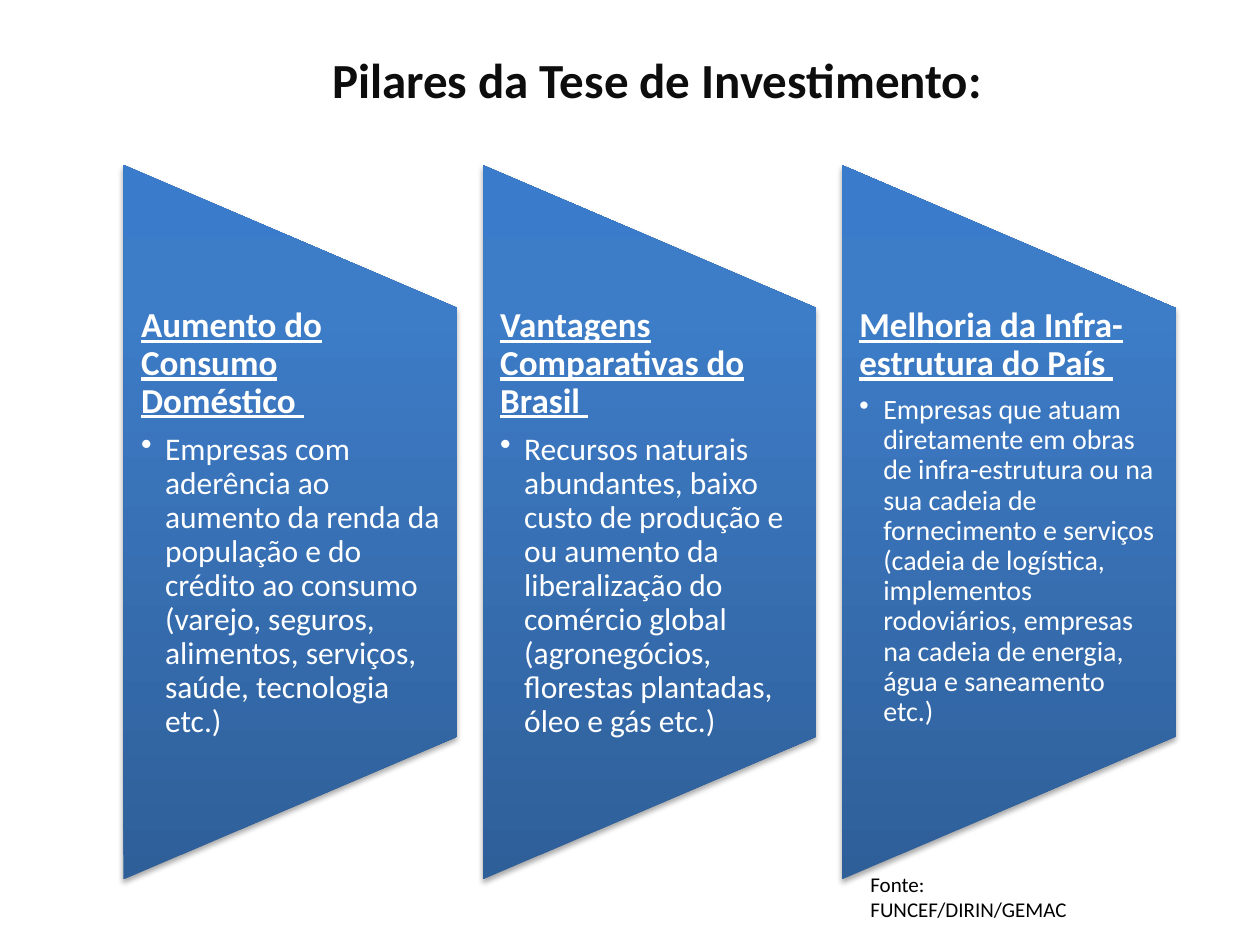
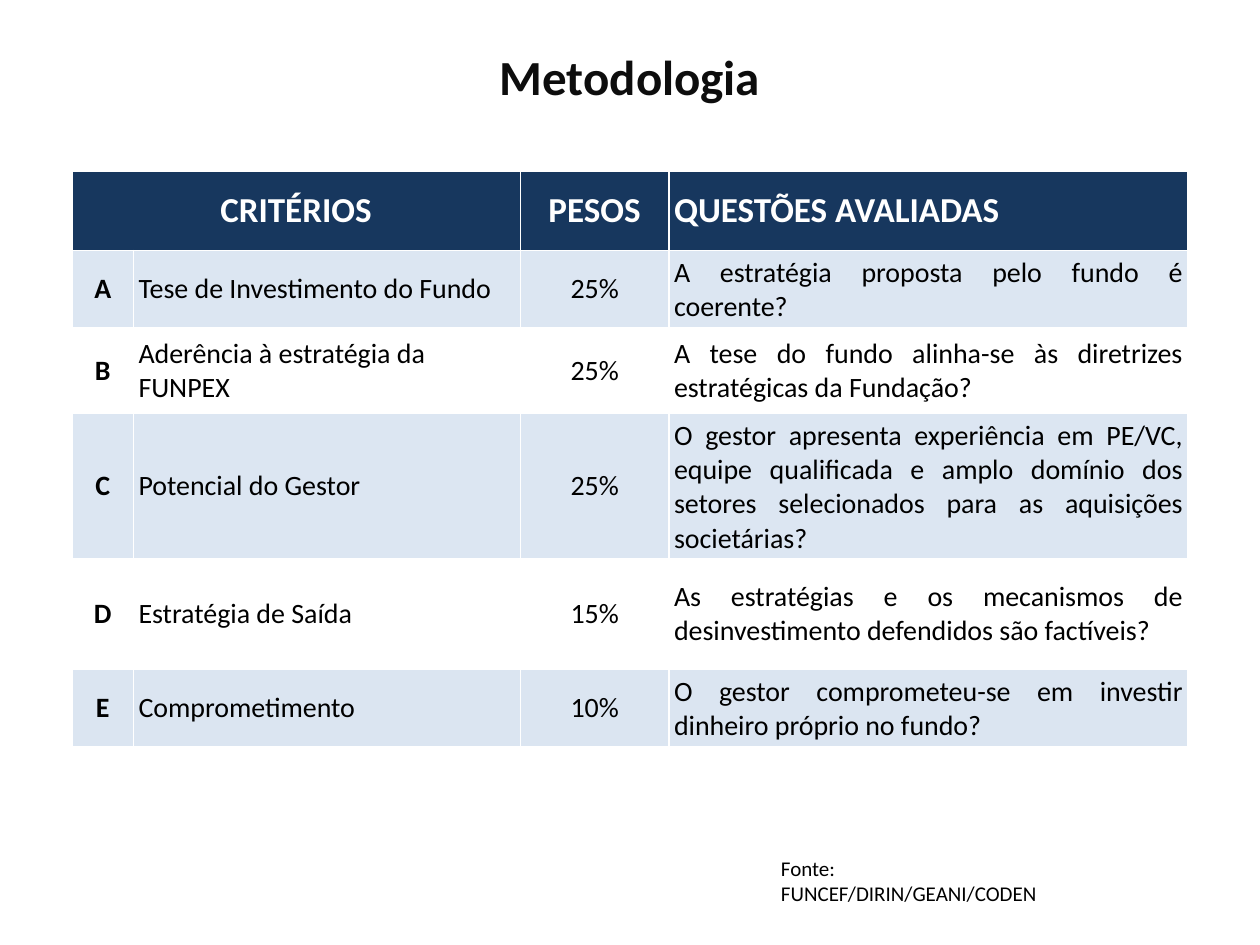
import lxml.etree
import pptx
import pptx.dml.color
import pptx.enum.shapes
import pptx.enum.text
import pptx.oxml
import pptx.oxml.ns
import pptx.util

HUES = {
    "ink": "0D0D0D", "black": "000000", "white": "FFFFFF",
    "navy": "17375E", "pale": "DCE6F2", "mist": "DBE5F1",
    "deep": "2F5F99", "blue": "3D7CC7", "top": "3A7CCB",
}
FONT = "Calibri"
UNIT = pptx.util.Inches(0.1)
LEFT = pptx.enum.text.PP_ALIGN.LEFT
MID = pptx.enum.text.PP_ALIGN.CENTER
EVEN = pptx.enum.text.PP_ALIGN.JUSTIFY
CORE = pptx.enum.text.MSO_ANCHOR.MIDDLE
TOP = pptx.enum.text.MSO_ANCHOR.TOP
SPACE = 'xmlns:a="http://schemas.openxmlformats.org/drawingml/2006/main"'


def write(para, text, size=16, hue="black", bold=False, line=False,
          align=LEFT, lead=None, after=None, dot=False):
    if dot:
        props = para._p.get_or_add_pPr()
        props.set("marL", str(pptx.util.Inches(0.19)))
        props.set("indent", str(-pptx.util.Inches(0.19)))
        mark = lxml.etree.SubElement(props, pptx.oxml.ns.qn("a:buChar"))
        mark.set("char", "•")
    para.alignment = align
    if lead:
        para.line_spacing = lead
    if after:
        para.space_after = pptx.util.Pt(after)
    run = para.add_run()
    run.text = text
    font = run.font
    font.name = FONT
    font.size = pptx.util.Pt(size)
    font.bold = bold
    font.underline = line
    font.color.rgb = pptx.dml.color.RGBColor.from_string(HUES[hue])


def frame(slide, x, y, wide, high, side=1, edge=0.5, anchor=TOP):
    area = [round(n * UNIT) for n in (x, y, wide, high)]
    body = slide.shapes.add_textbox(*area).text_frame
    body.word_wrap = True
    body.vertical_anchor = anchor
    body.margin_left = body.margin_right = round(side * UNIT)
    body.margin_top = body.margin_bottom = round(edge * UNIT)
    return body


deck = pptx.Presentation()
deck.slide_width = 100 * UNIT
deck.slide_height = 75 * UNIT

heads = [
    ("Pilares da Tese de Investimento:", (4.3, 0, 95.7, 12.5),
     "Fonte: FUNCEF/DIRIN/GEMAC", (68.1, 68.7, 21.7, 5)),
    ("Metodologia", (5, 1.3, 90, 9.5),
     "Fonte: FUNCEF/DIRIN/GEANI/CODEN", (61, 67.4, 26.4, 5)),
]
slides = []
for title, place, source, foot in heads:
    slide = deck.slides.add_slide(deck.slide_layouts[6])
    body = frame(slide, *place, anchor=CORE)
    write(body.paragraphs[0], title, size=28, hue="ink", bold=True, align=MID)
    slides.append((slide, source, foot))

plans = [
    ("Aumento do Consumo Doméstico ", 18,
     "Empresas com aderência ao aumento da renda da população e do crédito "
     "ao consumo (varejo, seguros, alimentos, serviços, saúde, tecnologia etc.)"),
    ("Vantagens Comparativas do Brasil ", 18,
     "Recursos naturais abundantes, baixo custo de produção e ou aumento da "
     "liberalização do comércio global (agronegócios, florestas plantadas, "
     "óleo e gás etc.)"),
    ("Melhoria da Infra- estrutura do País ", 16,
     "Empresas que atuam diretamente em obras de infra-estrutura ou na sua "
     "cadeia de fornecimento e serviços (cadeia de logística, implementos "
     "rodoviários, empresas na cadeia de energia, água e saneamento etc.)"),
]
STEP, WIDE, TALL = 28.5, 26.5, 56.7
stops = "".join(
    f'<a:gs pos="{spot}"><a:srgbClr val="{HUES[hue]}"/></a:gs>'
    for spot, hue in ((0, "deep"), (80000, "blue"), (100000, "top")))
GRAD = (f'<a:gradFill {SPACE} rotWithShape="0"><a:gsLst>{stops}</a:gsLst>'
        '<a:lin ang="16200000" scaled="0"/></a:gradFill>')
SHADE = (f'<a:effectLst {SPACE}><a:outerShdw blurRad="40000" dist="23000" '
         'dir="5400000" rotWithShape="0"><a:srgbClr val="000000">'
         '<a:alpha val="35000"/></a:srgbClr></a:outerShdw></a:effectLst>')

slide = slides[0][0]
for rank, (name, size, text) in enumerate(plans):
    x = 9.8 + rank * STEP
    area = (x + (WIDE - TALL) / 2, 41.45 - WIDE / 2, TALL, WIDE)
    flag = slide.shapes.add_shape(
        pptx.enum.shapes.MSO_SHAPE.FLOWCHART_MANUAL_OPERATION,
        *[round(n * UNIT) for n in area])
    flag.rotation = 270
    flag.line.fill.background()
    rim = flag._element.spPr.find(pptx.oxml.ns.qn("a:ln"))
    rim.addprevious(pptx.oxml.parse_xml(GRAD))
    rim.addnext(pptx.oxml.parse_xml(SHADE))
    body = frame(slide, x, 24.4, WIDE, 34, side=1.4, edge=0)
    write(body.paragraphs[0], name, size=20, hue="white", bold=True,
          line=True, lead=0.9, after=7)
    write(body.add_paragraph(), text, size=size, hue="white", lead=0.9,
          after=0.15 * size, dot=True)

rows = [
    (6.3, "navy", ("CRITÉRIOS", "", "PESOS", "QUESTÕES AVALIADAS")),
    (6.1, "pale", ("A", "Tese de Investimento do Fundo", "25%",
                   "A estratégia proposta pelo fundo é coerente?")),
    (6.8, "white", ("B", "Aderência à estratégia da FUNPEX", "25%",
                    "A tese do fundo alinha-se às diretrizes estratégicas "
                    "da Fundação?")),
    (11.5, "pale", ("C", "Potencial do Gestor", "25%",
                    "O gestor apresenta experiência em PE/VC, equipe "
                    "qualificada e amplo domínio dos setores selecionados "
                    "para as aquisições societárias?")),
    (8.8, None, ("D", "Estratégia de Saída", "15%",
                 "As estratégias e os mecanismos de desinvestimento "
                 "defendidos são factíveis?")),
    (6.1, "mist", ("E", "Comprometimento", "10%",
                   "O gestor comprometeu-se em investir dinheiro próprio "
                   "no fundo?")),
]
cols = (4.9, 30.7, 11.8, 41.2)
slide = slides[1][0]
area = (5.7, 13.6, sum(cols), sum(row[0] for row in rows))
grid = slide.shapes.add_table(
    len(rows), len(cols), *[round(n * UNIT) for n in area]).table
grid.first_row = grid.horz_banding = False
for col, wide in zip(grid.columns, cols):
    col.width = round(wide * UNIT)
for rank, (high, hue, texts) in enumerate(rows):
    grid.rows[rank].height = round(high * UNIT)
    for spot, text in enumerate(texts):
        cell = grid.cell(rank, spot)
        props = cell._tc.get_or_add_tcPr()
        for side in "LRTB":
            props.append(pptx.oxml.parse_xml(
                f'<a:ln{side} {SPACE} w="12700"><a:solidFill><a:srgbClr '
                f'val="{HUES["white"]}"/></a:solidFill></a:ln{side}>'))
        if hue:
            cell.fill.solid()
            cell.fill.fore_color.rgb = pptx.dml.color.RGBColor.from_string(HUES[hue])
        else:
            cell.fill.background()
        cell.vertical_anchor = CORE
        cell.margin_left = cell.margin_right = round(0.4 * UNIT)
        cell.margin_top = cell.margin_bottom = round(0.4 * UNIT)
        if not text:
            continue
        head = rank == 0
        write(cell.text_frame.paragraphs[0], text, size=20 if head else 16,
              hue="white" if head else "black", bold=head or spot == 0,
              align=(MID, LEFT, MID, LEFT if head else EVEN)[spot])
grid.cell(0, 0).merge(grid.cell(0, 1))

for slide, source, foot in slides:
    write(frame(slide, *foot).paragraphs[0], source, size=12)

deck.save("out.pptx")
